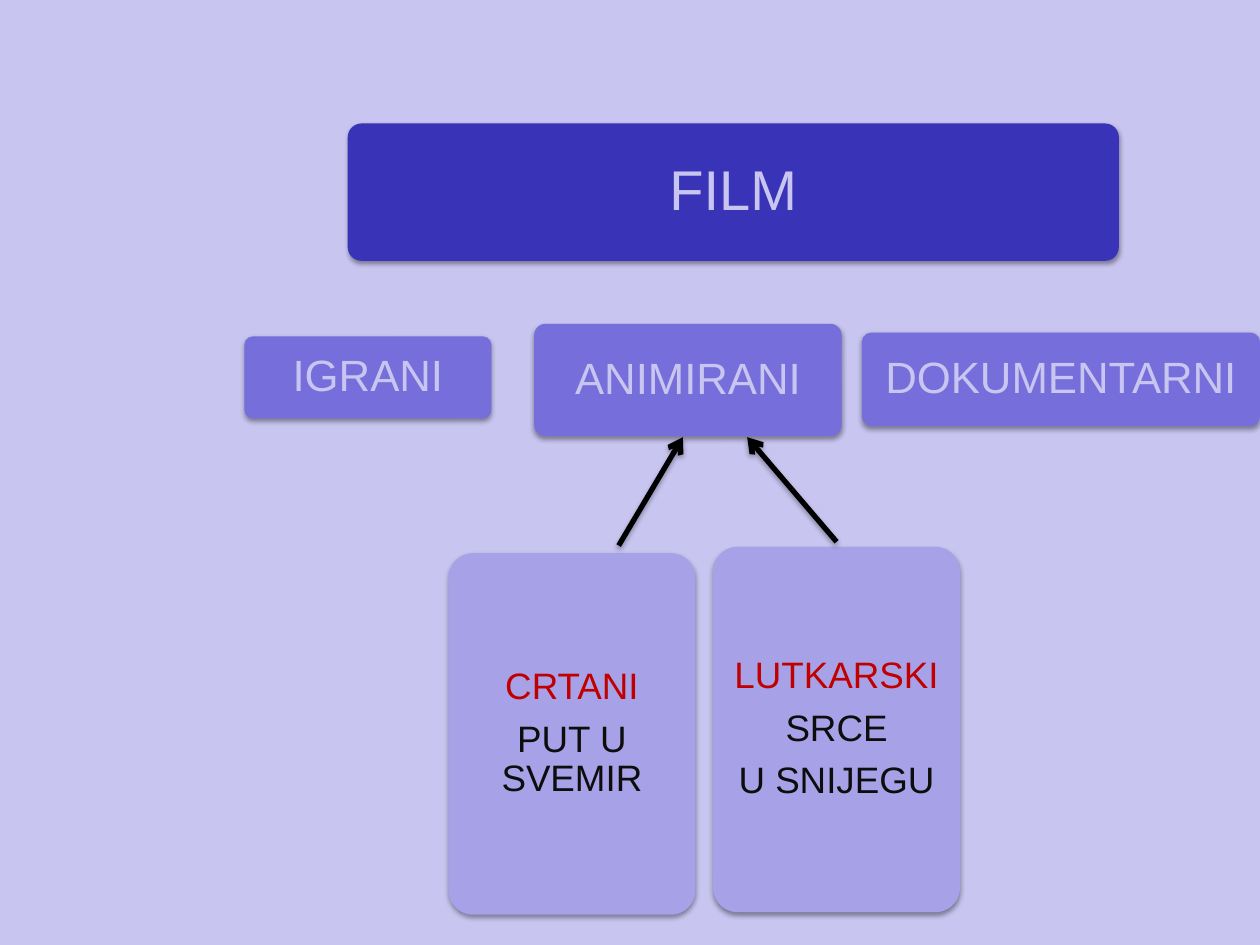
from lxml import etree
from pptx import Presentation
from pptx.dml.color import RGBColor
from pptx.enum import shapes, text
from pptx.oxml import ns
from pptx.util import Inches, Pt

LAVENDER = RGBColor(0xC8, 0xC5, 0xF0)
INDIGO = RGBColor(0x39, 0x33, 0xB7)
VIOLET = RGBColor(0x76, 0x6E, 0xDA)
LILAC = RGBColor(0xA7, 0xA2, 0xE7)
RED = RGBColor(0xC0, 0x00, 0x00)
INK = RGBColor(0x0D, 0x0D, 0x0D)
BLACK = RGBColor(0, 0, 0)

# Levels of the film tree: fill, text size, inset, first line and later lines
LEVELS = {
    "film": dict(fill=INDIGO, size=32, inset=0.13, colors=(LAVENDER, LAVENDER)),
    "genre": dict(fill=VIOLET, size=25, inset=0.1, colors=(LAVENDER, LAVENDER)),
    "example": dict(fill=LILAC, size=21, inset=0.09, colors=(RED, INK)),
}

# Level, lines of text, (left, top, width, height)
BOXES = [
    ("film", ["FILM"], (2.76, 0.98, 6.12, 1.09)),
    ("genre", ["ANIMIRANI"], (4.24, 2.57, 2.44, 0.89)),
    ("example", ["CRTANI", "PUT U SVEMIR"], (3.56, 4.39, 1.96, 2.87)),
    ("example", ["LUTKARSKI", "SRCE", "U SNIJEGU"], (5.66, 4.34, 1.96, 2.9)),
    ("genre", ["IGRANI"], (1.94, 2.67, 1.96, 0.65)),
    ("genre", ["DOKUMENTARNI"], (6.84, 2.64, 3.16, 0.74)),
]

# Start x, start y, end x, end y
ARROWS = [(4.91, 4.33, 5.42, 3.47), (6.64, 4.3, 5.93, 3.47)]


def add_element(parent, tag, **attributes):
    return etree.SubElement(parent, ns.qn(tag), attributes)


def add_shadow(effects, distance, opacity):
    shadow = add_element(effects, "a:outerShdw", blurRad=str(Pt(3.1)),
                         dist=str(Pt(distance)), dir="5400000", rotWithShape="0")
    color = add_element(shadow, "a:srgbClr", val=str(BLACK))
    add_element(color, "a:alpha", val=str(opacity * 1000))


def add_box(page, level, lines, place):
    look = LEVELS[level]
    box = page.shapes.add_shape(shapes.MSO_SHAPE.ROUNDED_RECTANGLE,
                                *map(Inches, place))
    box.adjustments[0] = 0.1
    box.fill.solid()
    box.fill.fore_color.rgb = look["fill"]
    box.line.fill.background()
    box.shadow.inherit = False
    add_shadow(box.element.spPr.find(ns.qn("a:effectLst")), 1.6, 38)

    frame = box.text_frame
    inset = Inches(look["inset"])
    frame_format = dict(word_wrap=True, vertical_anchor=text.MSO_ANCHOR.MIDDLE,
                        margin_left=inset, margin_right=inset,
                        margin_top=inset, margin_bottom=inset)
    para_format = dict(alignment=text.PP_ALIGN.CENTER, line_spacing=0.9,
                       space_after=Pt(0.35 * look["size"]))
    for name, value in frame_format.items():
        setattr(frame, name, value)

    for index, line in enumerate(lines):
        para = frame.add_paragraph() if index else frame.paragraphs[0]
        for name, value in para_format.items():
            setattr(para, name, value)
        span = para.add_run()
        span.text = line
        span.font.name = "Arial"
        span.font.size = Pt(look["size"])
        span.font.color.rgb = look["colors"][min(index, 1)]


def add_arrow(page, ends):
    arrow = page.shapes.add_connector(shapes.MSO_CONNECTOR.STRAIGHT,
                                      *map(Inches, ends))
    arrow.line.color.rgb = BLACK
    arrow.line.width = Pt(3)
    add_element(arrow.line._get_or_add_ln(), "a:tailEnd", type="arrow")
    add_shadow(add_element(arrow.element.spPr, "a:effectLst"), 1.8, 35)


def main():
    deck = Presentation()
    deck.slide_width, deck.slide_height = Inches(10), Inches(7.5)
    page = deck.slides.add_slide(deck.slide_layouts[6])
    page.background.fill.solid()
    page.background.fill.fore_color.rgb = LAVENDER

    for level, lines, place in BOXES:
        add_box(page, level, lines, place)
    for ends in ARROWS:
        add_arrow(page, ends)
    deck.save("out.pptx")


if __name__ == "__main__":
    main()
